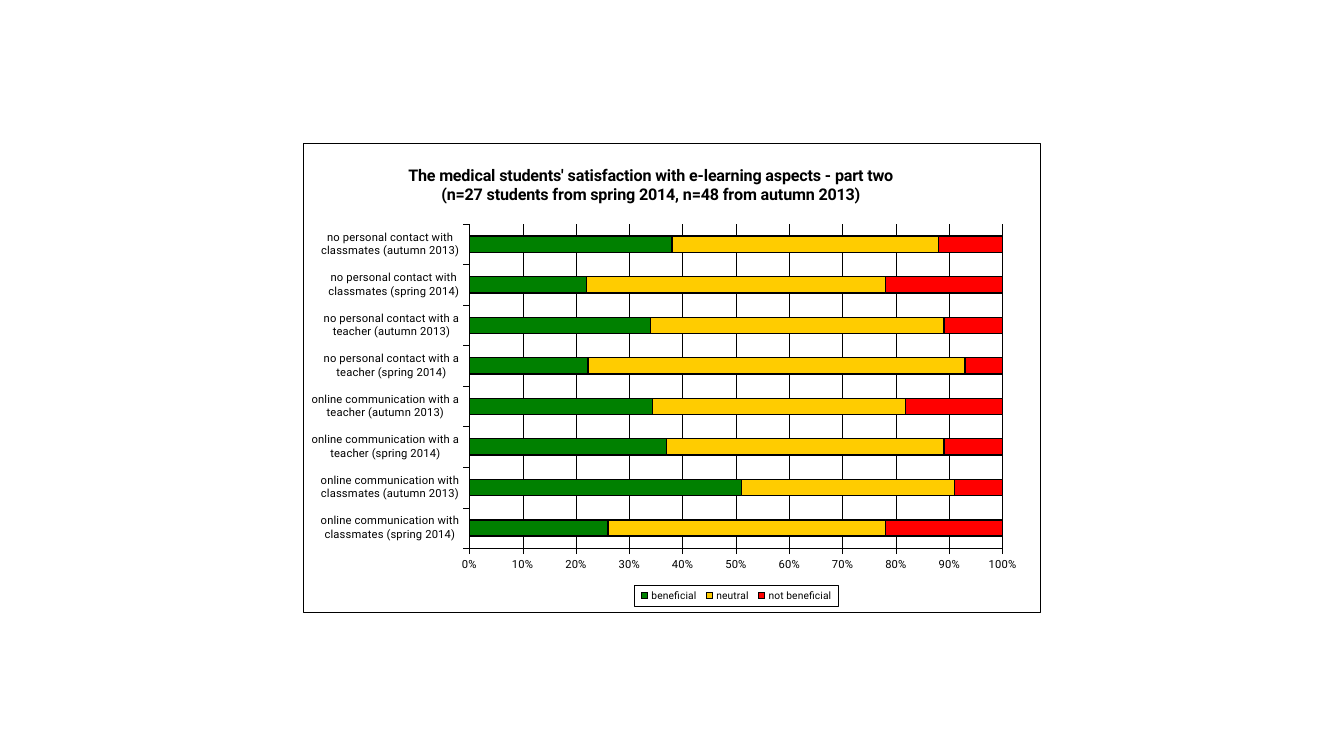
from lxml.etree import SubElement, fromstring
from pptx import Presentation
from pptx.chart.data import CategoryChartData
from pptx.dml.color import RGBColor
from pptx.enum.chart import XL_CHART_TYPE, XL_LEGEND_POSITION, XL_TICK_MARK
from pptx.oxml.ns import nsdecls, qn
from pptx.util import Inches, Pt

COLORS = {
    "ink": "000000",
    "paper": "FFFFFF",
    "beneficial": "008000",
    "neutral": "FFCC00",
    "not beneficial": "FF0000",
}
TITLE = (
    "The medical students' satisfaction with e-learning aspects - part two\n"
    "(n=27 students from spring 2014, n=48 from autumn 2013)"
)
ASPECTS = [
    "online communication with classmates",
    "online communication with a teacher",
    "no personal contact with a teacher",
    "no personal contact with classmates",
]
TERMS = ["spring 2014", "autumn 2013"]
VOTES = {
    "beneficial": [26, 51, 37, 34, 22, 34, 22, 38],
    "neutral": [52, 40, 52, 47, 70, 55, 56, 50],
    "not beneficial": [22, 9, 11, 18, 7, 11, 22, 12],
}


def color(name):
    return RGBColor.from_string(COLORS[name])


def style(font, size, bold=False):
    font.name = "Roboto"
    font.size = Pt(size)
    font.bold = bold
    font.color.rgb = color("ink")


def stroke(line, width=0.25):
    line.color.rgb = color("ink")
    line.width = Pt(width)


def place(part, index, **spots):
    layout = part.find(qn("c:layout"))
    if layout is not None:
        part.remove(layout)
    layout = fromstring(f"<c:layout {nsdecls('c')}/>")
    part.insert(index, layout)
    manual = SubElement(layout, qn("c:manualLayout"))
    if "w" in spots:
        target = "inner" if part.tag == qn("c:plotArea") else None
        if target:
            SubElement(manual, qn("c:layoutTarget")).set("val", target)
    for axis in "xy":
        SubElement(manual, qn(f"c:{axis}Mode")).set("val", "edge")
    for key, value in spots.items():
        SubElement(manual, qn(f"c:{key}")).set("val", str(value))


def frame(part):
    box = fromstring(
        f'<c:spPr {nsdecls("c", "a")}>'
        f'<a:solidFill><a:srgbClr val="{COLORS["paper"]}"/></a:solidFill>'
        f'<a:ln w="{Pt(0.25)}"><a:solidFill>'
        f'<a:srgbClr val="{COLORS["ink"]}"/></a:solidFill></a:ln></c:spPr>'
    )
    part.find(qn("c:txPr")).addprevious(box)


def add_title(chart):
    chart.has_title = True
    text = chart.chart_title.text_frame
    text.text = TITLE
    for line in text.paragraphs:
        for run in line.runs:
            style(run.font, 11.5, True)
    place(chart.chart_title._element, 1, x=0.138, y=0.04)


def add_axes(chart):
    for axis in (chart.category_axis, chart.value_axis):
        axis.major_tick_mark = XL_TICK_MARK.OUTSIDE
        axis.minor_tick_mark = XL_TICK_MARK.NONE
        style(axis.tick_labels.font, 8)
        stroke(axis.format.line)
    scale = chart.value_axis
    scale.minimum_scale = 0
    scale.maximum_scale = 1
    scale.major_unit = 0.1
    scale.has_major_gridlines = True
    stroke(scale.major_gridlines.format.line)
    scale.tick_labels.number_format = "0%"
    scale.tick_labels.number_format_is_linked = False


def add_legend(chart):
    chart.has_legend = True
    legend = chart.legend
    legend.position = XL_LEGEND_POSITION.BOTTOM
    legend.include_in_layout = False
    style(legend.font, 7.3)
    place(legend._element, 1, x=0.449, y=0.941, w=0.277, h=0.045)
    frame(legend._element)


def add_survey(slide, left, top, width, height):
    data = CategoryChartData(number_format="0")
    data.categories = [f"{aspect} ({term})" for aspect in ASPECTS for term in TERMS]
    for name, values in VOTES.items():
        data.add_series(name, values)
    chart = slide.shapes.add_chart(
        XL_CHART_TYPE.BAR_STACKED_100, left, top, width, height, data
    ).chart
    chart.font.name = "Arial"
    chart.font.size = Pt(8.5)
    chart.font.color.rgb = color("ink")
    frame(chart._chartSpace)
    add_title(chart)
    add_axes(chart)
    add_legend(chart)
    plot = chart.plots[0]
    plot.gap_width = 150
    plot.overlap = 100
    plot.vary_by_categories = False
    for series in plot.series:
        series.format.fill.solid()
        series.format.fill.fore_color.rgb = color(series.name)
        stroke(series.format.line, 1)
    area = chart._chartSpace.chart.plotArea
    place(area, 0, x=0.225, y=0.172, w=0.724, h=0.691)


def main():
    deck = Presentation()
    deck.slide_width = Inches(13.33)
    deck.slide_height = Inches(7.5)
    slide = deck.slides.add_slide(deck.slide_layouts[6])
    add_survey(slide, Inches(3.01), Inches(1.42), Inches(7.31), Inches(4.66))
    deck.save("out.pptx")


if __name__ == "__main__":
    main()
